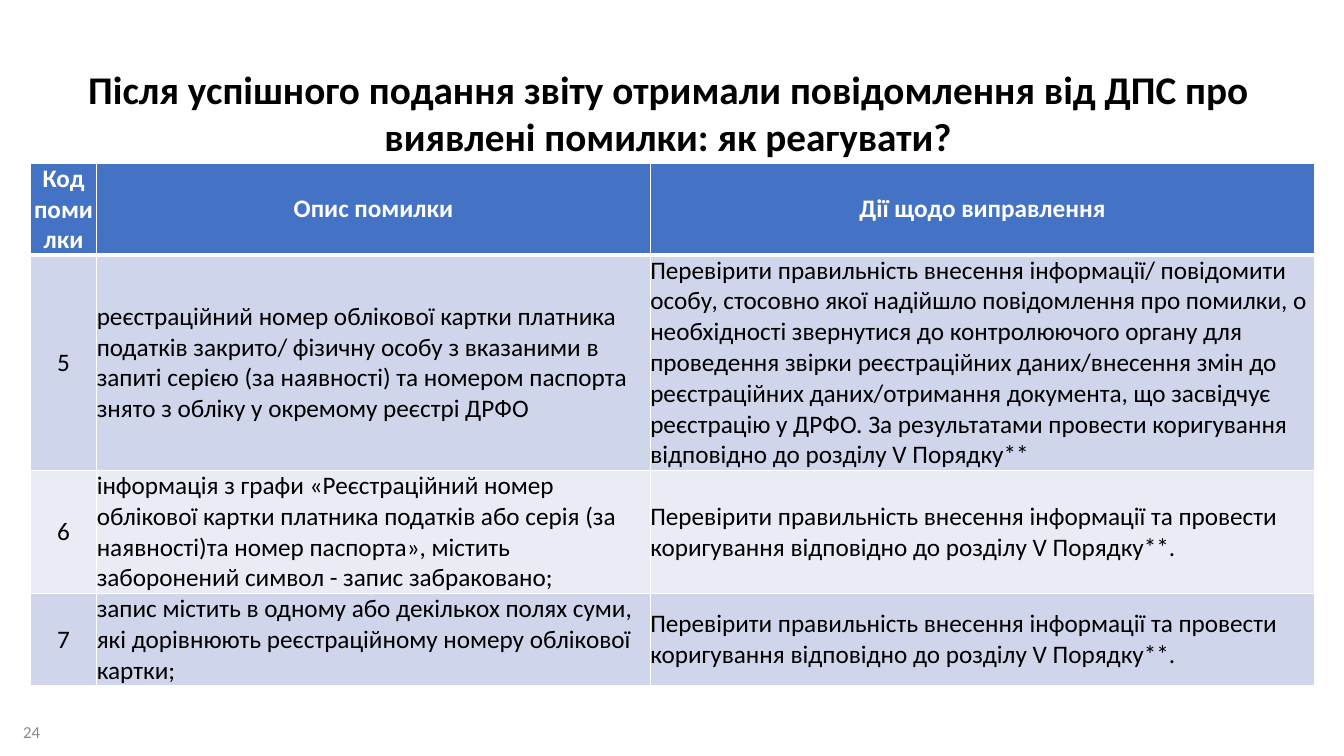
from dataclasses import dataclass

from lxml.etree import SubElement
from pptx import Presentation
from pptx.dml.color import RGBColor
from pptx.enum.text import MSO_ANCHOR as Anchor, PP_ALIGN as Align
from pptx.oxml.ns import qn
from pptx.util import Inches, Pt


@dataclass(frozen=True)
class Theme:
    font: str = "Calibri"
    black: str = "000000"
    white: str = "FFFFFF"
    grey: str = "898989"
    header: str = "4472C4"
    bands: tuple = ("CFD5EA", "E9EBF5")
    title_size: int = 28
    table_size: int = 18
    number_size: int = 12
    thin: int = 1
    thick: int = 3


THEME = Theme()

TITLE = "Після успішного подання звіту отримали повідомлення від ДПС про виявлені помилки: як реагувати?"
CORRECTION = "Перевірити правильність внесення інформації та провести коригування відповідно до розділу V Порядку**."
ROWS = [
    (["Код", "помилки"], ["Опис помилки"], ["Дії щодо виправлення"]),
    (
        ["5"],
        ["реєстраційний номер облікової картки платника податків закрито/ фізичну особу з вказаними в "
         "запиті серією (за наявності) та номером паспорта знято з обліку у окремому реєстрі ДРФО"],
        ["Перевірити правильність внесення інформації/ повідомити особу, стосовно якої надійшло "
         "повідомлення про помилки, о необхідності звернутися до контролюючого органу для проведення "
         "звірки реєстраційних даних/внесення змін до реєстраційних даних/отримання документа, що "
         "засвідчує реєстрацію у ДРФО. За результатами провести коригування відповідно до розділу V "
         "Порядку**"],
    ),
    (
        ["6"],
        ["інформація з графи «Реєстраційний номер облікової картки платника податків або серія (за "
         "наявності)та номер паспорта», містить заборонений символ - запис забраковано;"],
        [CORRECTION],
    ),
    (
        ["7"],
        ["запис містить в одному або декількох полях суми, які дорівнюють реєстраційному номеру "
         "облікової картки;"],
        [CORRECTION],
    ),
]
COLUMN_WIDTHS = (0.66, 5.49, 6.59)
ROW_HEIGHTS = (0.91, 2.14, 1.22, 0.91)


def write_paragraphs(frame, lines, size, color, bold=False, align=Align.LEFT):
    for index, line in enumerate(lines):
        para = frame.add_paragraph() if index else frame.paragraphs[0]
        para.alignment = align
        span = para.add_run()
        span.text = line
        span.font.name = THEME.font
        span.font.size = Pt(size)
        span.font.bold = bold
        span.font.color.rgb = RGBColor.from_string(color)


def add_text(page, left, top, width, height, anchor, text, **style):
    box = page.shapes.add_textbox(Inches(left), Inches(top), Inches(width), Inches(height))
    frame = box.text_frame
    frame.word_wrap = True
    frame.vertical_anchor = anchor
    write_paragraphs(frame, [text], **style)


def set_borders(cell, top, bottom):
    properties = cell._tc.get_or_add_tcPr()
    widths = {"lnL": THEME.thin, "lnR": THEME.thin, "lnT": top, "lnB": bottom}
    for side, width in widths.items():
        line = SubElement(properties, qn(f"a:{side}"), w=str(Pt(width)))
        fill = SubElement(line, qn("a:solidFill"))
        SubElement(fill, qn("a:srgbClr"), val=THEME.white)


def fill_cell(cell, lines, row, column):
    is_header = row == 0
    set_borders(
        cell,
        top=THEME.thick if row == 1 else THEME.thin,
        bottom=THEME.thick if is_header else THEME.thin,
    )
    cell.fill.solid()
    color = THEME.header if is_header else THEME.bands[(row - 1) % 2]
    cell.fill.fore_color.rgb = RGBColor.from_string(color)
    cell.margin_left = cell.margin_right = cell.margin_top = cell.margin_bottom = 0
    cell.vertical_anchor = Anchor.MIDDLE
    write_paragraphs(
        cell.text_frame,
        lines,
        size=THEME.table_size,
        color=THEME.white if is_header else THEME.black,
        bold=is_header,
        align=Align.CENTER if is_header or column == 0 else Align.LEFT,
    )


def add_error_table(page, left, top):
    table = page.shapes.add_table(
        len(ROWS), len(COLUMN_WIDTHS), Inches(left), Inches(top),
        Inches(sum(COLUMN_WIDTHS)), Inches(sum(ROW_HEIGHTS)),
    ).table
    for column, width in zip(table.columns, COLUMN_WIDTHS):
        column.width = Inches(width)
    for row, height in zip(table.rows, ROW_HEIGHTS):
        row.height = Inches(height)
    for row, cells in enumerate(ROWS):
        for column, lines in enumerate(cells):
            fill_cell(table.cell(row, column), lines, row, column)


def main():
    deck = Presentation()
    deck.slide_width = Inches(13.33)
    deck.slide_height = Inches(7.5)
    page = deck.slides.add_slide(deck.slide_layouts[6])
    add_text(page, 0.13, 7.06, 0.55, 0.39, Anchor.MIDDLE, "24",
             size=THEME.number_size, color=THEME.grey)
    add_text(page, 0.52, 0.6, 12.21, 0.92, Anchor.TOP, TITLE,
             size=THEME.title_size, color=THEME.black, bold=True, align=Align.CENTER)
    add_error_table(page, 0.3, 1.62)
    deck.save("out.pptx")


if __name__ == "__main__":
    main()
